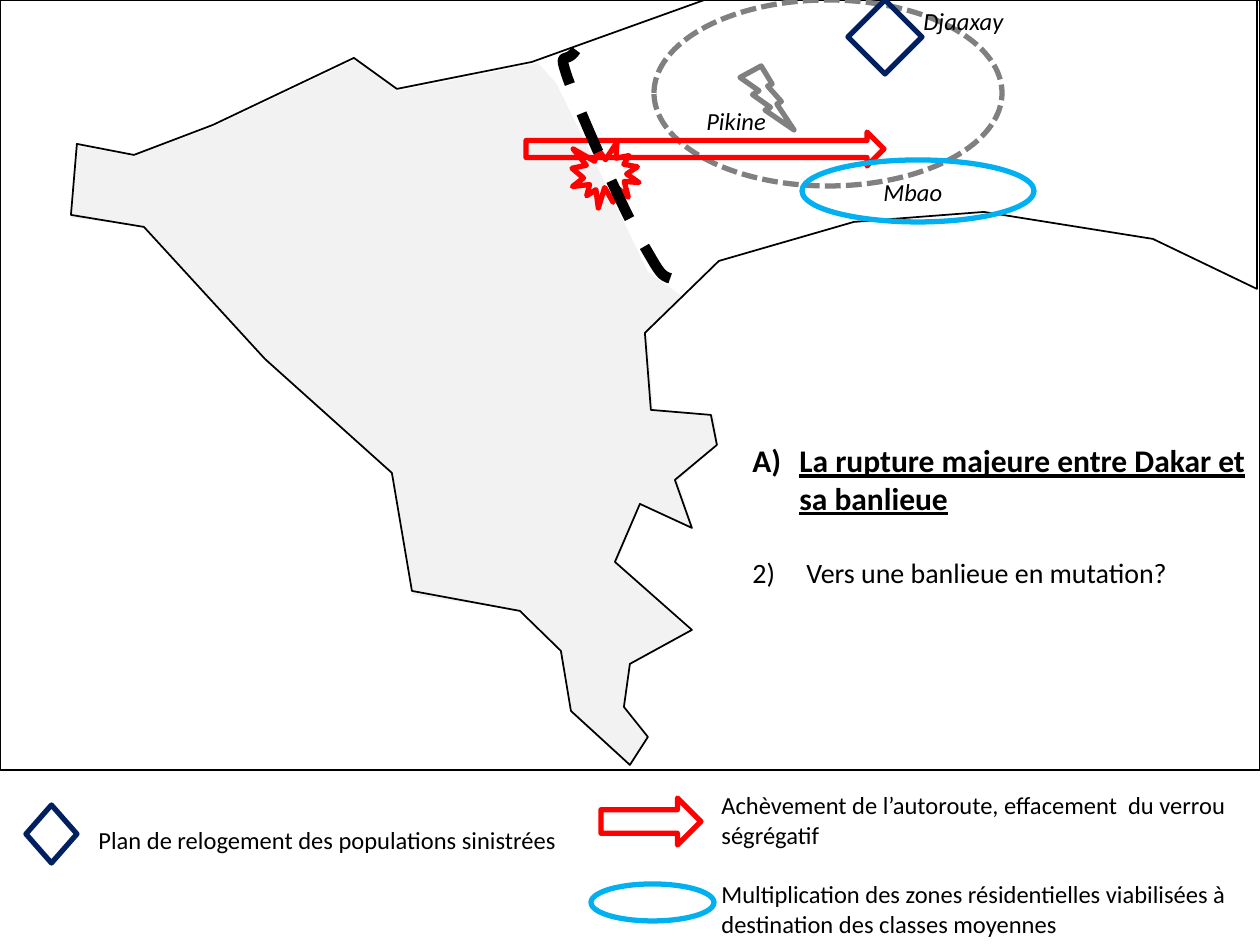
from lxml import etree
from pptx import Presentation
from pptx.dml.color import RGBColor
from pptx.enum import dml, shapes, text
from pptx.oxml.ns import qn
from pptx.util import Pt

PX = 914400 / 126  # EMU per px
THEME = {
    "font": "Calibri", "label": 14, "heading": 18, "subheading": 16,
    "black": "000000", "land": "F2F2F2", "red": "FF0000",
    "grey": "808080", "navy": "002060", "blue": "00B0F0",
}

prs = Presentation()
prs.slide_width, prs.slide_height = round(1260 * PX), round(945 * PX)
s = prs.slides.add_slide(prs.slide_layouts[6])


def style(sp, fill=None, line=None, width=3, dash=None):
    sp.shadow.inherit = False
    if fill:
        sp.fill.solid()
        sp.fill.fore_color.rgb = RGBColor.from_string(THEME[fill])
    else:
        sp.fill.background()
    if line:
        sp.line.color.rgb = RGBColor.from_string(THEME[line])
        sp.line.width = Pt(width)
        sp.line.dash_style = dash
    else:
        sp.line.fill.background()


def add_text(box, paragraphs, wrap=True):
    """Each paragraph is (wording, size, bold, italic, underline)."""
    tf = s.shapes.add_textbox(*(round(v * PX) for v in box)).text_frame
    tf.word_wrap = wrap
    tf.auto_size = text.MSO_AUTO_SIZE.SHAPE_TO_FIT_TEXT
    for i, (wording, size, bold, italic, underline) in enumerate(paragraphs):
        p = tf.add_paragraph() if i else tf.paragraphs[0]
        p.text = wording
        font = p.runs[0].font
        font.name, font.size = THEME["font"], Pt(THEME[size])
        font.bold, font.italic, font.underline = bold, italic, underline
        font.color.rgb = RGBColor.from_string(THEME["black"])
    return tf


# Peninsula, coastline and suburb boundary
peninsula = [
    (538, 63), (398, 91), (357, 59), (213, 127), (134, 156), (77, 146),
    (71, 218), (144, 226), (270, 365), (393, 475), (412, 595), (523, 611),
    (561, 651), (571, 713), (629, 765), (648, 738), (625, 709), (630, 665),
    (690, 631), (617, 563), (640, 505), (693, 529), (678, 481), (718, 444),
    (714, 415), (653, 411), (648, 338), (645, 333), (683, 297), (648, 272),
    (591, 154), (556, 83),
]
coastline = [
    (77, 144), (71, 215), (144, 227), (265, 359), (392, 473), (412, 591),
    (520, 611), (561, 651), (571, 711), (630, 765), (648, 737), (624, 707),
    (630, 664), (692, 630), (615, 562), (640, 504), (692, 528), (675, 480),
    (717, 445), (711, 415), (651, 410), (645, 333), (719, 261), (854, 222),
    (984, 212), (1153, 239), (1257, 289), (1257, -4), (713, -3), (532, 62),
    (397, 89), (354, 58), (213, 125), (134, 155),
]
boundary_curves = [
    [(576, 50), (566, 66), (557, 47), (568, 79)],
    [(568, 79), (580, 113), (625, 215), (646, 249)],
    [(646, 249), (667, 285), (659, 273), (694, 286)],
]
STEPS = 12
boundary = [boundary_curves[0][0]]
for curve in boundary_curves:
    for step in range(1, STEPS + 1):
        t = step / STEPS
        weights = ((1 - t) ** 3, 3 * t * (1 - t) ** 2, 3 * t * t * (1 - t), t ** 3)
        boundary.append(tuple(sum(w * pt[axis] for w, pt in zip(weights, curve))
                              for axis in (0, 1)))

outlines = [
    (peninsula, True, {"fill": "land"}),
    (coastline, True, {"line": "black", "width": 1}),
    (boundary, False, {"line": "black", "width": 6,
                       "dash": dml.MSO_LINE.DASH}),
]
drawn = []
for points, closed, look in outlines:
    points = [(round(x * PX), round(y * PX)) for x, y in points]
    builder = s.shapes.build_freeform(*points[0], scale=1.0)
    builder.add_line_segments(points[1:], close=closed)
    sp = builder.convert_to_shape()
    style(sp, **look)
    drawn.append(sp)
boundary_line = drawn[-1]

# Map symbols and their legend keys
kind = shapes.MSO_SHAPE
symbols = [
    (kind.RECTANGLE, (0, 0, 1260, 770), "black", 0.75, None),
    (kind.EXPLOSION1, (572, 142, 67, 66), "red", 3, None),
    (kind.OVAL, (654, 0, 348, 186), "grey", 3, "sysDash"),
    (kind.LIGHTNING_BOLT, (740, 66, 54, 64), "grey", 3, None),
    (kind.RIGHT_ARROW, (526, 132, 358, 34), "red", 3, None),
    (kind.RIGHT_ARROW, (601, 798, 100, 47), "red", 3, None),
    (kind.DIAMOND, (848, 0, 74, 74), "navy", 3, None),
    (kind.DIAMOND, (26, 805, 51, 58), "navy", 3, None),
    (kind.OVAL, (802, 160, 232, 62), "blue", 3, None),
    (kind.OVAL, (591, 884, 123, 37), "blue", 3, None),
]
for preset, box, color, width, dash in symbols:
    sp = s.shapes.add_shape(preset, *(round(v * PX) for v in box))
    style(sp, line=color, width=width,
          dash=dml.MSO_LINE.SQUARE_DOT if dash else None)

# Place names and legend
labels = [
    ("Pikine", (694, 100, 87, 43), True, False),
    ("Djaaxay", (911, 0, 106, 43), True, False),
    ("Mbao", (871, 171, 84, 43), True, False),
    ("Plan de relogement des populations sinistrées",
     (86, 819, 488, 43), False, False),
    ("Achèvement de l’autoroute, effacement  du verrou ségrégatif",
     (709, 784, 551, 72), False, True),
    ("Multiplication des zones résidentielles viabilisées à "
     "destination des classes moyennes", (709, 873, 551, 72), False, True),
]
for wording, box, italic, wrap in labels:
    add_text(box, [(wording, "label", False, italic, False)], wrap)

# Numbered headings
tf = add_text((740, 435, 520, 165), [
    ("La rupture majeure entre Dakar et sa banlieue", "heading", True, False, True),
    ("Vers une banlieue en mutation?", "subheading", False, False, False),
])
numbering = [("alphaUcParenR", 1, 47), ("arabicParenR", 2, 54)]
for p, (scheme, start, indent) in zip(tf.paragraphs, numbering):
    pPr = p._p.get_or_add_pPr()
    pPr.set("marL", str(round(indent * PX)))
    pPr.set("indent", str(round(-indent * PX)))
    etree.SubElement(pPr, qn("a:buFont"), typeface=THEME["font"])
    etree.SubElement(pPr, qn("a:buAutoNum"), type=scheme, startAt=str(start))
tf.paragraphs[1].space_before = Pt(22)

# The boundary lies over everything else
s.shapes._spTree.append(boundary_line._element)

prs.save("out.pptx")
